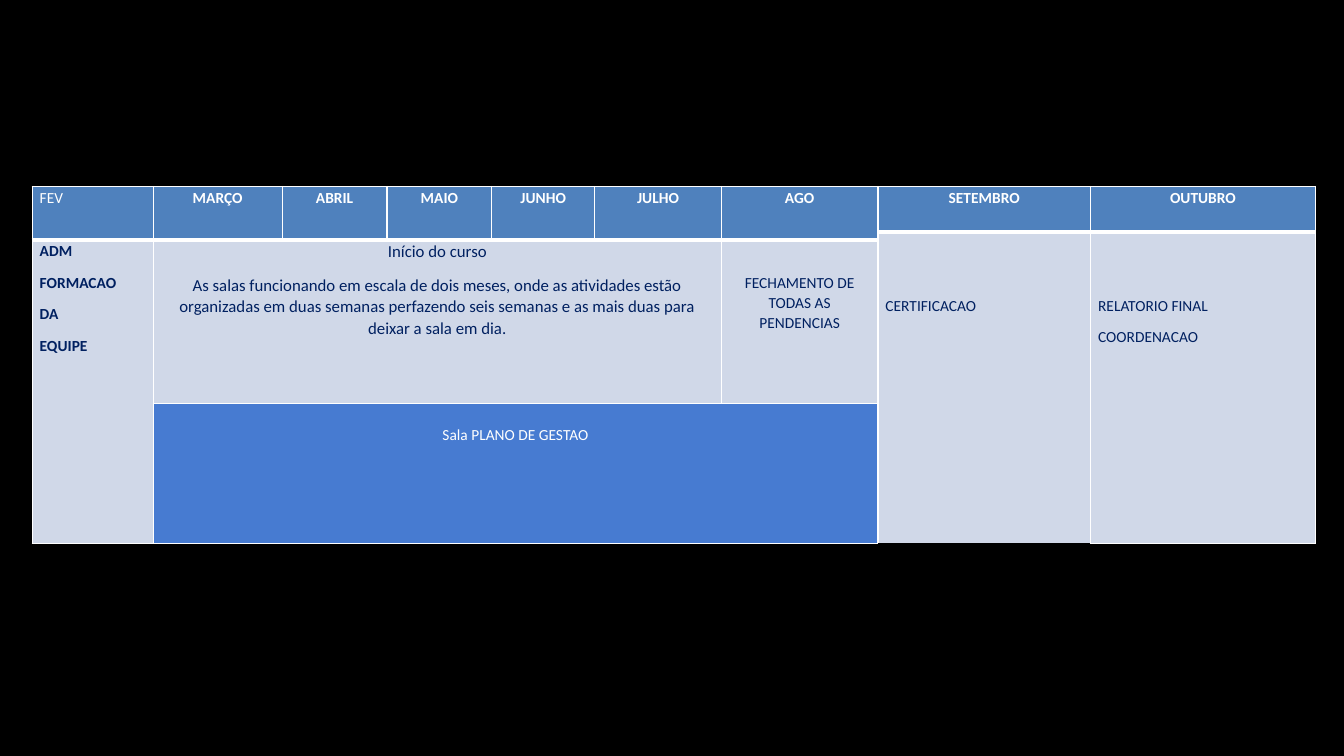
from lxml.etree import SubElement
from pptx import Presentation
from pptx.dml.color import RGBColor
from pptx.enum.text import PP_ALIGN
from pptx.oxml.ns import qn
from pptx.util import Pt

WHITE, NAVY = "FFFFFF", "002060"
HEADER_BLUE, PALE_BLUE, ROOM_BLUE = "4F81BD", "D0D8E8", "477BD1"
MARGINS = {"margin_left": Pt(5.4), "margin_right": Pt(5.4), "margin_top": Pt(0.5), "margin_bottom": Pt(0)}
SPACING = {"line_spacing": 1.07, "space_after": Pt(8)}
TABLE_TOP = 133.2


def rgb(hex_color):
    """Turn a hex string into a colour."""
    return RGBColor.from_string(hex_color)


def apply_format(target, values):
    """Set each attribute of the target from a dict."""
    for attribute, value in values.items():
        setattr(target, attribute, value)


def add_border(cell, side, width):
    """Draw one white cell edge, or hide it when the width is zero."""
    edge = SubElement(cell._tc.get_or_add_tcPr(), qn(f"a:ln{side}"), w=str(Pt(width)))
    if width:
        fill = SubElement(edge, qn("a:solidFill"))
        SubElement(fill, qn("a:srgbClr"), val=WHITE)
    else:
        SubElement(edge, qn("a:noFill"))


def add_calendar(slide, left, columns, rows):
    """Add a plain table with a thick rule below its header row."""
    frame = slide.shapes.add_table(len(rows), len(columns), Pt(left), Pt(TABLE_TOP),
                                   Pt(sum(columns)), Pt(sum(rows)))
    calendar = frame.table
    apply_format(calendar, {"first_row": False, "horz_banding": False})
    for column, width in zip(calendar.columns, columns):
        column.width = Pt(width)
    for row, height in zip(calendar.rows, rows):
        row.height = Pt(height)
    for row_index, row in enumerate(calendar.rows):
        for cell in row.cells:
            widths = {"L": 1, "R": 1, "T": 3 if row_index == 1 else 1, "B": 1 if row_index else 3}
            for side, width in widths.items():
                add_border(cell, side, width)
    return calendar


def fill_cell(cell, lines, fill=PALE_BLUE, color=NAVY, size=11, bold=False,
              align=PP_ALIGN.LEFT, top=0.5):
    """Colour a cell and write its paragraphs."""
    cell.fill.solid()
    cell.fill.fore_color.rgb = rgb(fill)
    apply_format(cell, {**MARGINS, "margin_top": Pt(top)})
    for index, line in enumerate(lines):
        text_frame = cell.text_frame
        paragraph = text_frame.add_paragraph() if index else text_frame.paragraphs[0]
        apply_format(paragraph, {**SPACING, "alignment": align})
        run = paragraph.add_run()
        run.text = line
        apply_format(run.font, {"name": "Calibri", "size": Pt(size), "bold": bold})
        run.font.color.rgb = rgb(color)


def fill_header(calendar, months):
    """Write the month names in the header row."""
    for cell, month in zip(calendar.rows[0].cells, months):
        first = month == "FEV"
        fill_cell(cell, [month], HEADER_BLUE, WHITE, bold=not first,
                  align=PP_ALIGN.LEFT if first else PP_ALIGN.CENTER)


def add_course_months(slide):
    """Build the February to August part of the schedule."""
    course = add_calendar(slide, 23, [86.4, 92.2, 74.9, 74.9, 73.4, 90.7, 111.6], [38.2, 116.6, 100.1])
    fill_header(course, ["FEV", "MARÇO", "ABRIL", "MAIO", "JUNHO", "JULHO", "AGO"])
    team, classes, closing, room = (course.cell(*place) for place in [(1, 0), (1, 1), (1, 6), (2, 1)])
    team.merge(course.cell(2, 0))
    classes.merge(course.cell(1, 5))
    room.merge(course.cell(2, 6))
    fill_cell(team, ["ADM", "FORMACAO", "DA", "EQUIPE"], bold=True)
    fill_cell(classes, [
        "Início do curso",
        "As salas funcionando em escala de dois meses, onde as atividades estão organizadas em duas "
        "semanas perfazendo seis semanas e as mais duas para deixar a sala em dia.",
    ], size=12, align=PP_ALIGN.CENTER)
    fill_cell(closing, ["FECHAMENTO DE TODAS AS PENDENCIAS"], align=PP_ALIGN.CENTER, top=22.9)
    fill_cell(room, ["Sala PLANO DE GESTAO"], ROOM_BLUE, WHITE, align=PP_ALIGN.CENTER, top=14.9)


def add_final_months(slide):
    """Build the September and October part of the schedule."""
    final = add_calendar(slide, 627.1, [151.9, 160.6], [32.4, 222.5])
    fill_header(final, ["SETEMBRO", "OUTUBRO"])
    certificate, report = final.rows[1].cells
    certificate_bottom = certificate._tc.tcPr.find(qn("a:lnB"))
    certificate._tc.tcPr.remove(certificate_bottom)
    add_border(certificate, "B", 0)
    fill_cell(certificate, ["CERTIFICACAO"], top=45.3)
    fill_cell(report, ["RELATORIO FINAL", "COORDENACAO"], top=45.3)


def main():
    """Build and save the schedule slide."""
    presentation = Presentation()
    apply_format(presentation, {"slide_width": Pt(960), "slide_height": Pt(540)})
    slide = presentation.slides.add_slide(presentation.slide_layouts[6])
    slide.background.fill.solid()
    slide.background.fill.fore_color.rgb = rgb("000000")
    add_course_months(slide)
    add_final_months(slide)
    presentation.save("out.pptx")


if __name__ == "__main__":
    main()
